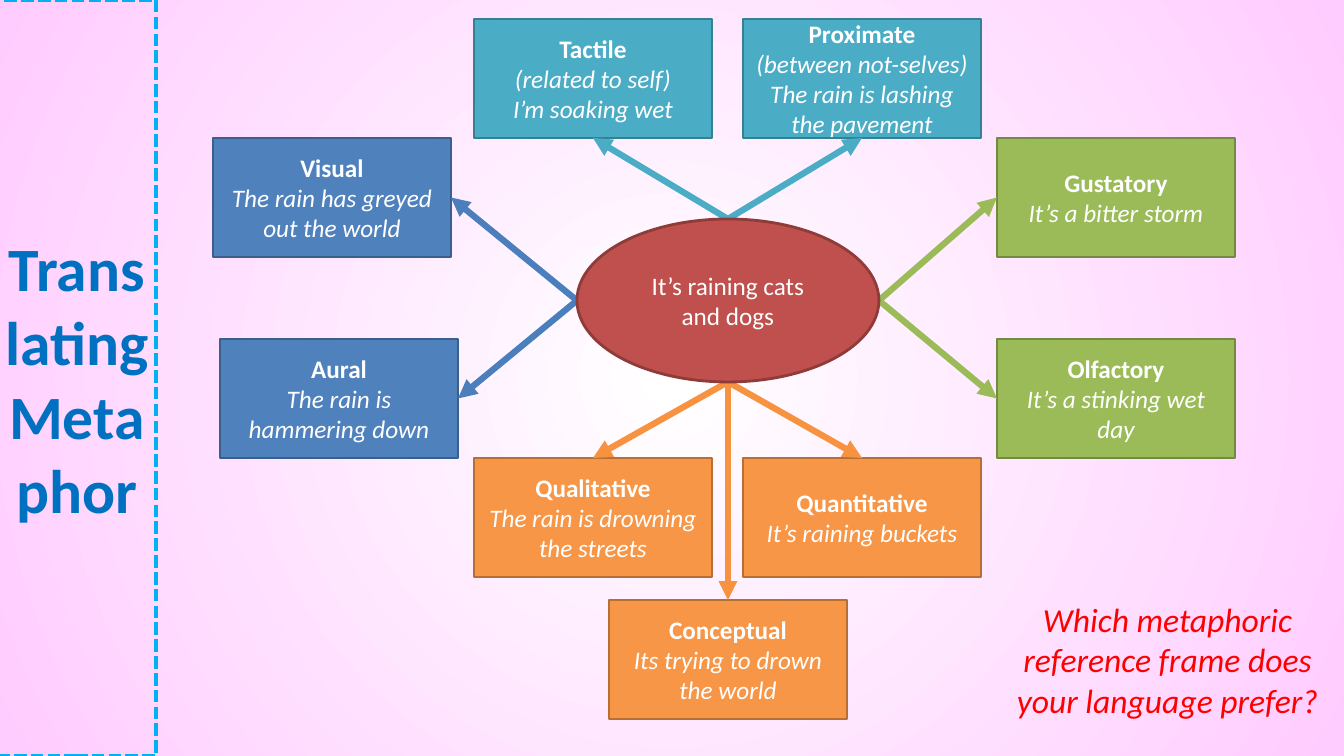
from lxml import etree
from pptx import Presentation
from pptx import util as u
from pptx.dml.color import RGBColor
from pptx.enum import dml, shapes, text
from pptx.oxml.ns import qn

PX = 914400 / 100.8
LEFT, RIGHT, UP, DOWN = (-1, 0), (1, 0), (0, -1), (0, 1)
CORE = (577, 219, 302, 163)
SIZE = (238, 119)

# Side of the core: box fill, box outline, arrow
TONES = {
    LEFT: ("4F81BD", "3A5F8C", "4B7EBC"),
    RIGHT: ("9BBB59", "738A42", "9BBB59"),
    UP: ("4BACC6", "377F92", "4BACC6"),
    DOWN: ("F79646", "B76F34", "F69240"),
}
FRAMES = [
    (LEFT, 213, 138, ["Visual", "The rain has greyed out the world"]),
    (LEFT, 220, 339, ["Aural", "The rain is hammering down"]),
    (UP, 474, 19, ["Tactile", "(related to self)", "I’m soaking wet"]),
    (UP, 743, 19, ["Proximate", "(between not-selves)",
                   "The rain is lashing the pavement"]),
    (RIGHT, 997, 138, ["Gustatory", "It’s a bitter storm"]),
    (RIGHT, 997, 339, ["Olfactory", "It’s a stinking wet day"]),
    (DOWN, 474, 458, ["Qualitative", "The rain is drowning the streets"]),
    (DOWN, 743, 458, ["Quantitative", "It’s raining buckets"]),
    (DOWN, 609, 600, ["Conceptual", "Its trying to drown the world"]),
]


def px(*nums):
    return [u.Emu(round(n * PX)) for n in nums]


def hue(code):
    return RGBColor.from_string(code)


def write(shape, lines, size, color, bold=False, italic=False):
    frame = shape.text_frame
    frame.word_wrap = True
    frame.text = "\n".join(lines)
    for para in frame.paragraphs:
        para.alignment = text.PP_ALIGN.CENTER
        font = para.font
        font.name, font.size = "Calibri", u.Pt(size)
        font.bold, font.italic = bold, italic
        font.color.rgb = hue(color)
    return frame


def block(slide, kind, box, fill, edge, lines):
    shape = slide.shapes.add_shape(kind, *px(*box))
    shape.shadow.inherit = False
    shape.fill.solid()
    shape.fill.fore_color.rgb = hue(fill)
    shape.line.color.rgb = hue(edge)
    shape.line.width = u.Pt(2)
    frame = write(shape, lines, 18, "FFFFFF")
    frame.vertical_anchor = text.MSO_ANCHOR.MIDDLE
    return frame


def middle(box, side):
    """Return the midpoint of one side of a box."""
    x, y, w, h = box
    dx, dy = side
    return x + w * (1 + dx) / 2, y + h * (1 + dy) / 2


def arrow(slide, start, end, color):
    link = slide.shapes.add_connector(
        shapes.MSO_CONNECTOR.STRAIGHT, *px(*start, *end))
    link.line.color.rgb = hue(color)
    link.line.width = u.Pt(4.5)
    etree.SubElement(link.line._get_or_add_ln(), qn("a:tailEnd"), type="triangle")
    etree.SubElement(link._element.spPr, qn("a:effectLst"))


def paint(slide):
    """Fill the background with a glow that is white at the centre."""
    fill = slide.background.fill
    fill.gradient()
    for stop, code in zip(fill.gradient_stops, ("FFFFFF", "FFCCFF")):
        stop.color.rgb = hue(code)
    line = next(slide._element.iter(qn("a:lin")))
    glow = etree.Element(qn("a:path"), path="circle")
    etree.SubElement(glow, qn("a:fillToRect"),
                     dict.fromkeys("ltrb", "50000"))
    line.getparent().replace(line, glow)


def banner(slide, box):
    title = slide.shapes.title
    title.left, title.top, title.width, title.height = px(*box)
    title.line.color.rgb = hue("00B0F0")
    title.line.width = u.Pt(3)
    title.line.dash_style = dml.MSO_LINE.SQUARE_DOT
    frame = write(title, ["Translating Metaphor"], 44, "0070C0", bold=True)
    frame.auto_size = text.MSO_AUTO_SIZE.NONE
    frame.vertical_anchor = text.MSO_ANCHOR.MIDDLE
    frame.margin_left = frame.margin_right = px(5)[0]


def wheel(slide, core):
    """Place the frames and join each one to the core."""
    for side, x, y, lines in FRAMES:
        fill, edge, _ = TONES[side]
        frame = block(slide, shapes.MSO_SHAPE.RECTANGLE, (x, y, *SIZE),
                      fill, edge, lines)
        head, *rest = frame.paragraphs
        head.font.bold = True
        for para in rest:
            para.font.italic = True
    for side, x, y, _ in FRAMES:
        back = (-side[0], -side[1])
        arrow(slide, middle(core, side), middle((x, y, *SIZE), back),
              TONES[side][2])
    block(slide, shapes.MSO_SHAPE.OVAL, core, "C0504D", "8E3B39",
          ["It’s raining cats and dogs"])


def query(slide, box):
    note = slide.shapes.add_textbox(*px(*box))
    write(note, ["Which metaphoric reference frame does your language prefer?"],
          24, "FF0000", italic=True)


def main():
    deck = Presentation()
    deck.slide_width, deck.slide_height = px(1344, 756)
    slide = deck.slides.add_slide(deck.slide_layouts.get_by_name("Title Only"))
    paint(slide)
    banner(slide, (-2, 0, 158, 756))
    wheel(slide, CORE)
    query(slide, (981, 594, 373, 132))
    deck.save("out.pptx")


if __name__ == "__main__":
    main()
